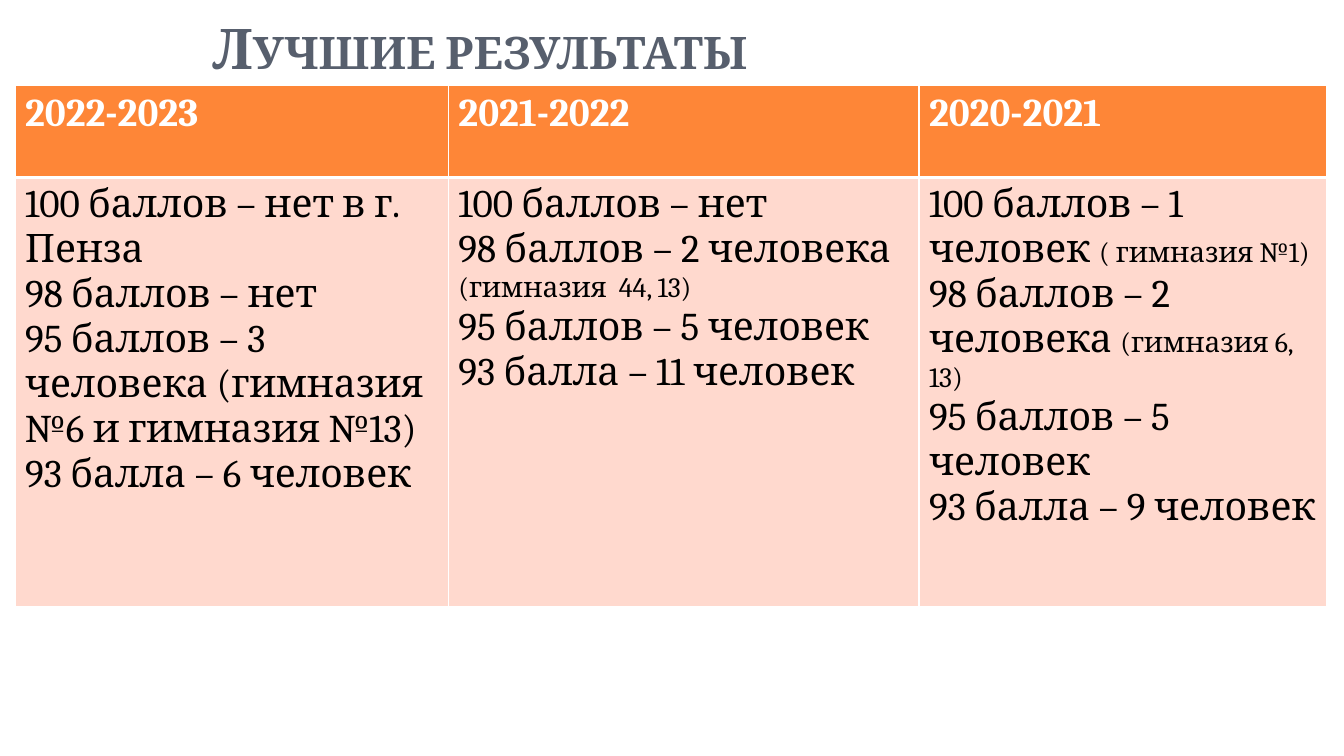
from dataclasses import dataclass

from lxml import etree
from pptx import Presentation
from pptx import util as u
from pptx.dml.color import RGBColor
from pptx.enum import text
from pptx.oxml import ns


@dataclass(frozen=True)
class Theme:
    font: str = "Cambria"
    title: str = "575F6D"
    header: str = "FE8637"
    body: str = "FFD9CE"
    white: str = "FFFFFF"
    black: str = "000000"
    title_size: int = 40
    main_size: int = 28
    note_size: int = 20


theme = Theme()


def add_run(paragraph, words, size, color, bold=False):
    run = paragraph.add_run()
    run.text = words
    run.font.name = theme.font
    run.font.size = u.Pt(size)
    run.font.bold = bold
    run.font.color.rgb = RGBColor.from_string(color)
    return run


def style_cell(cell, fill, top, bottom):
    """Fill the cell and draw white borders; top and bottom are widths in points."""
    properties = cell._tc.get_or_add_tcPr()
    for side, width in (("lnL", 1), ("lnR", 1), ("lnT", top), ("lnB", bottom)):
        line = etree.SubElement(properties, ns.qn(f"a:{side}"), w=str(u.Pt(width)))
        solid = etree.SubElement(line, ns.qn("a:solidFill"))
        etree.SubElement(solid, ns.qn("a:srgbClr"), val=theme.white)
    cell.fill.solid()
    cell.fill.fore_color.rgb = RGBColor.from_string(fill)


# Each year holds its result lines; a line is the main words and a smaller note.
results = {
    "2022-2023": [
        ("100 баллов – нет в г. Пенза", ""),
        ("98 баллов – нет", ""),
        ("95 баллов – 3 человека (гимназия №6 и гимназия №13)", ""),
        ("93 балла – 6 человек", ""),
    ],
    "2021-2022": [
        ("100 баллов – нет", ""),
        ("98 баллов – 2 человека ", "(гимназия  44, 13)"),
        ("95 баллов – 5 человек", ""),
        ("93 балла – 11 человек", ""),
    ],
    "2020-2021": [
        ("100 баллов – 1 человек ", "( гимназия №1)"),
        ("98 баллов – 2 человека ", "(гимназия 6, 13)"),
        ("95 баллов – 5 человек", ""),
        ("93 балла – 9 человек", ""),
    ],
}
column_widths = [10.92, 11.86, 10.27]
row_heights = [2.31, 10.82]

presentation = Presentation()
presentation.slide_width = u.Cm(33.87)
presentation.slide_height = u.Cm(19.05)
slide = presentation.slides.add_slide(presentation.slide_layouts[6])

title = slide.shapes.add_textbox(u.Cm(5.1), u.Cm(0.84), u.Cm(23.27), u.Cm(1.32))
title.text_frame.word_wrap = True
title.text_frame.vertical_anchor = text.MSO_ANCHOR.BOTTOM
title_run = add_run(title.text_frame.paragraphs[0], "Лучшие результаты",
                    theme.title_size, theme.title, bold=True)
title_run.font._element.set("cap", "small")

table = slide.shapes.add_table(
    len(row_heights), len(results), u.Cm(0.38), u.Cm(2.16),
    u.Cm(sum(column_widths)), u.Cm(sum(row_heights))).table
for row, height in zip(table.rows, row_heights):
    row.height = u.Cm(height)

for index, (year, lines) in enumerate(results.items()):
    table.columns[index].width = u.Cm(column_widths[index])

    header = table.cell(0, index)
    style_cell(header, theme.header, top=1, bottom=3)
    add_run(header.text_frame.paragraphs[0], year, theme.main_size, theme.white, bold=True)

    body = table.cell(1, index)
    style_cell(body, theme.body, top=3, bottom=1)
    for number, (score, note) in enumerate(lines):
        frame = body.text_frame
        paragraph = frame.add_paragraph() if number else frame.paragraphs[0]
        add_run(paragraph, score, theme.main_size, theme.black)
        if note:
            add_run(paragraph, note, theme.note_size, theme.black)

presentation.save("out.pptx")
